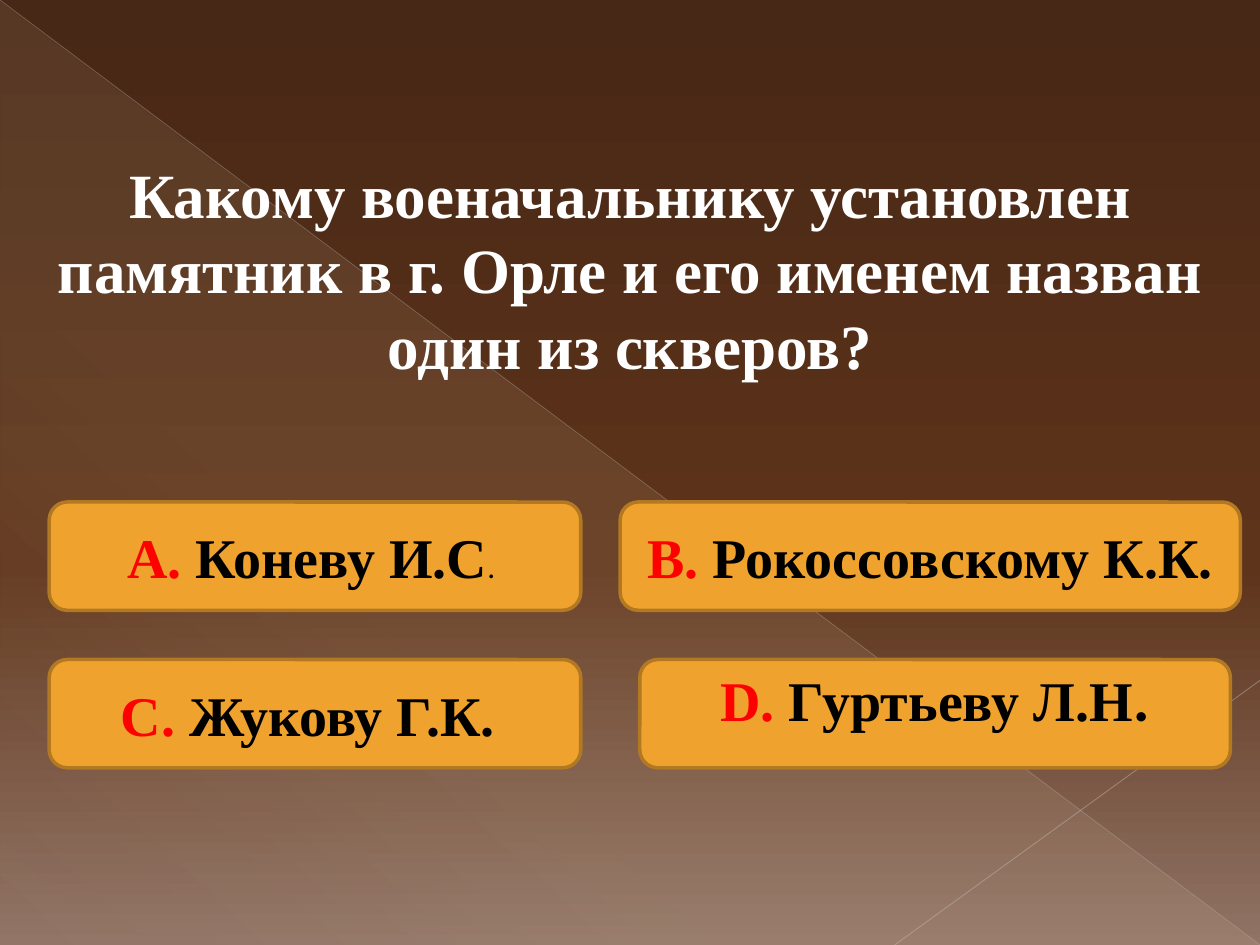
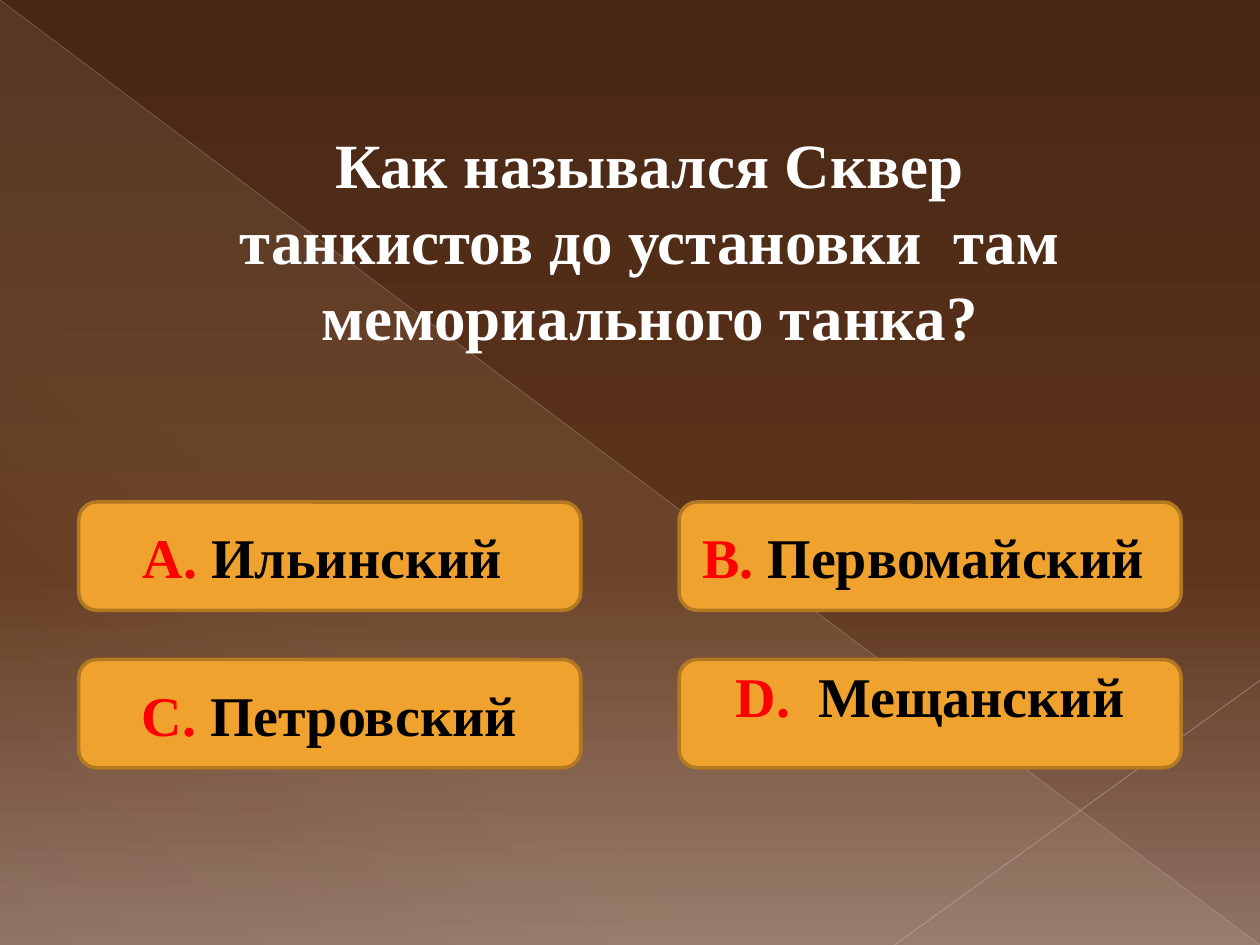
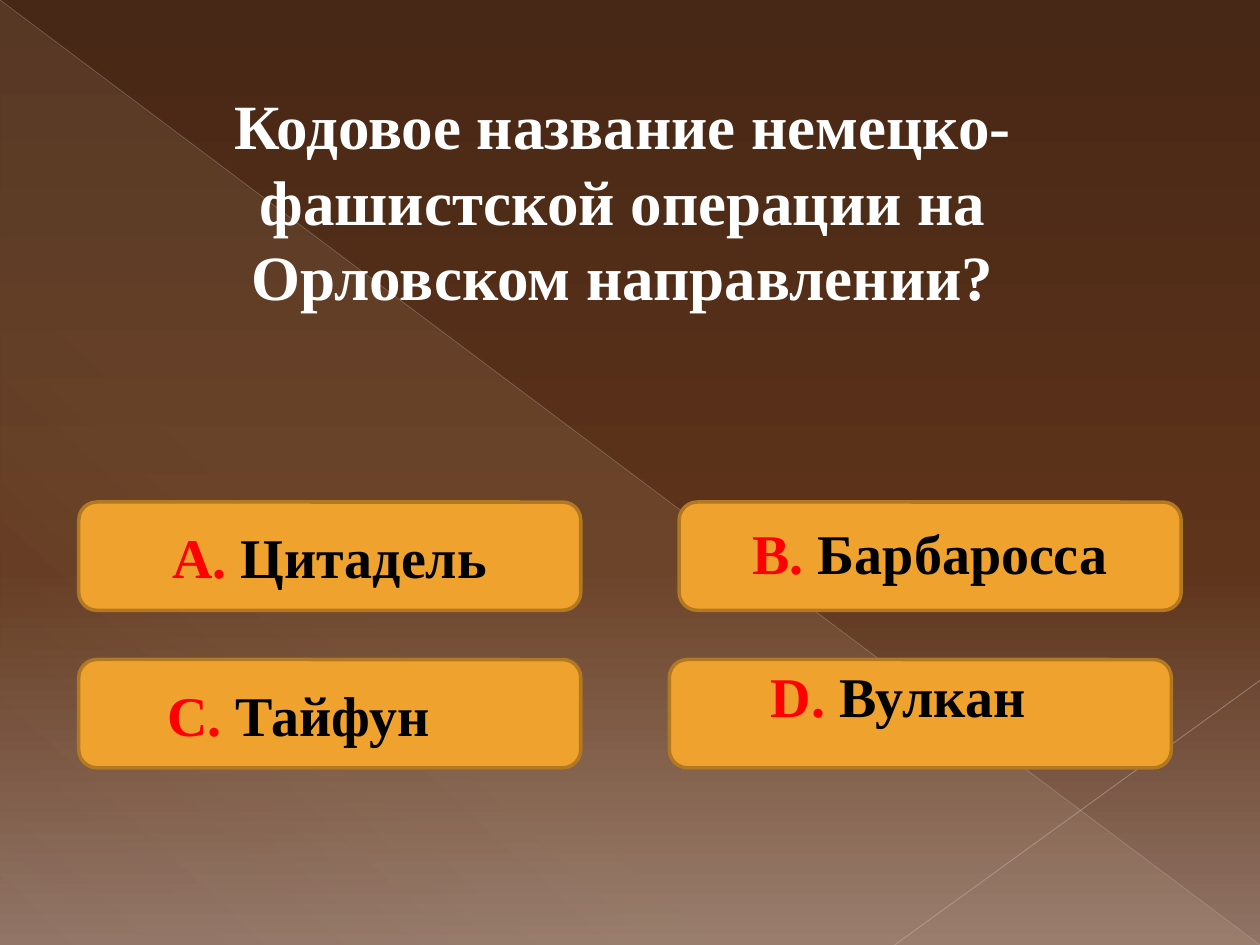
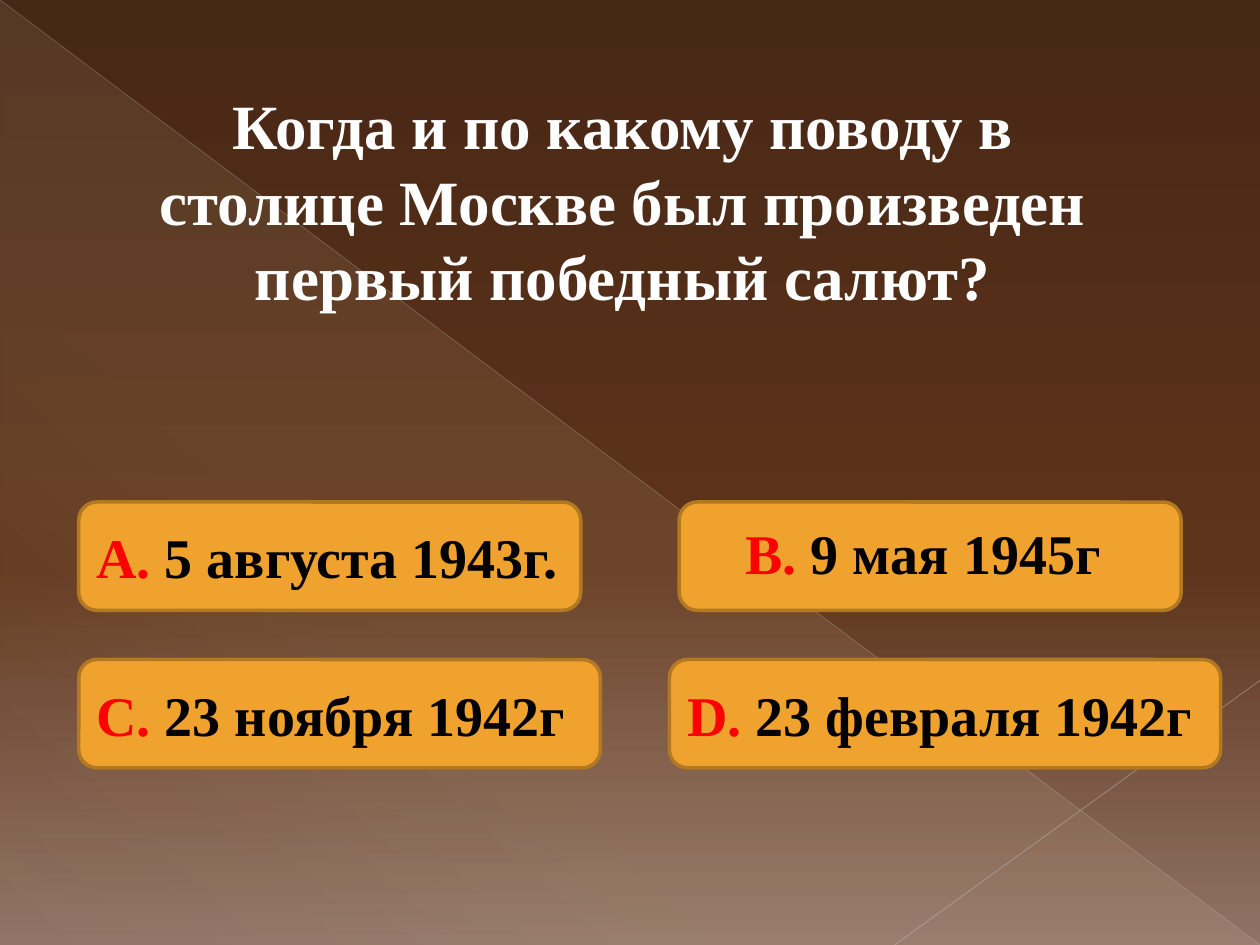
from dataclasses import dataclass
from typing import NamedTuple

from lxml.etree import SubElement
from pptx import Presentation
from pptx.dml.color import RGBColor
from pptx.enum.shapes import MSO_CONNECTOR, MSO_SHAPE
from pptx.enum.text import MSO_ANCHOR, MSO_AUTO_SIZE, PP_ALIGN
from pptx.oxml.ns import qn
from pptx.util import Emu, Inches, Pt

WIDTH, HEIGHT = Inches(10), Inches(7.5)
COLUMNS, ROWS = 128, 96
ANSWER_ROWS = (51, 67)
ANSWER_HEIGHT = 11
QUESTION_HEIGHT = 24.6


class Stop(NamedTuple):
    position: int
    color: str
    opacity: int = 100


class Ray(NamedTuple):
    start: tuple[float, float]
    end: tuple[float, float]
    color: str
    weight: float
    opacity: int


class Span(NamedTuple):
    column: float
    width: float


class Ending(NamedTuple):
    text: str
    size: int
    bold: bool


@dataclass(frozen=True)
class Theme:
    font: str = "Times New Roman"
    ending_font: str = "Calibri"
    question_size: int = 36
    answer_size: int = 32
    question: str = "FFFFFF"
    letter: str = "FF0000"
    answer: str = "000000"
    button: str = "F0A22E"
    button_edge: str = "B27822"
    edge_weight: float = 2
    backdrop: tuple[Stop, ...] = (
        Stop(0, "472715"), Stop(60, "5E341B"), Stop(100, "907365"))
    glow: tuple[Stop, ...] = (
        Stop(0, "FBEEC9", 10), Stop(70, "FBEEC9", 8), Stop(100, "FBEEC9", 1))
    rays: tuple[Ray, ...] = (
        Ray((0, 0), (1, 1), "BCB7B4", 0.39, 35),
        Ray((1, 0.72), (0.71, 1), "C4BFBD", 0.47, 45))


@dataclass(frozen=True)
class Answer:
    letter: str
    text: str
    span: Span
    ending: Ending | None = None
    align: PP_ALIGN = PP_ALIGN.CENTER
    left_pad: float = 0
    right_pad: float = 0
    bottom_pad: float = 0


@dataclass(frozen=True)
class Question:
    text: str
    span: Span
    row: float
    answers: tuple[Answer, Answer, Answer, Answer]


THEME = Theme()
LEFT, RIGHT, INNER_RIGHT = Span(8, 51), Span(69, 51), Span(68, 51)
WIDE_LEFT = Span(5, 54)
HEADING = Span(13, 100.5)

QUESTIONS = (
    Question(
        "Какому военачальнику установлен памятник в г. Орле и его именем назван один из скверов?",
        Span(0, 128), 15,
        (Answer("А. ", "Коневу И.С", WIDE_LEFT, Ending(". ", 18, False)),
         Answer("В. ", "Рокоссовскому К.К.", Span(63, 63)),
         Answer("С. ", "Жукову Г.К. ", WIDE_LEFT),
         Answer("D. ", "Гуртьеву Л.Н", Span(65, 60), Ending(".", 36, True),
                bottom_pad=0.27))),
    Question(
        "Как назывался Сквер танкистов до установки  там мемориального танка?",
        Span(20, 92), 12,
        (Answer("А. ", "Ильинский ", LEFT),
         Answer("В. ", "Первомайский", RIGHT, right_pad=0.11),
         Answer("С. ", "Петровский", LEFT),
         Answer("D.  ", "Мещанский", RIGHT, bottom_pad=0.29))),
    Question(
        "Кодовое название немецко-фашистской операции на Орловском направлении?",
        HEADING, 8,
        (Answer("А. ", "Цитадель", LEFT),
         Answer("В. ", "Барбаросса", RIGHT, bottom_pad=0.06),
         Answer("С. ", "Тайфун", LEFT, align=PP_ALIGN.LEFT, left_pad=0.56),
         Answer("D. ", "Вулкан", INNER_RIGHT, right_pad=0.35, bottom_pad=0.29))),
    Question(
        "Когда и по какому поводу в столице Москве был произведен первый победный салют?",
        HEADING, 8,
        (Answer("А. ", "5 августа 1943г.", LEFT, align=PP_ALIGN.LEFT),
         Answer("В. ", "9 мая 1945г ", RIGHT, bottom_pad=0.06),
         Answer("С. ", "23 ноября 1942г", Span(8, 53), align=PP_ALIGN.LEFT),
         Answer("D. ", "23 февраля 1942г", Span(68, 56), align=PP_ALIGN.LEFT))),
)


def across(columns: float) -> Emu:
    return Emu(round(WIDTH * columns / COLUMNS))


def down(rows: float) -> Emu:
    return Emu(round(HEIGHT * rows / ROWS))


def style_run(run, color: str, size: float, font: str = THEME.font, bold: bool = True) -> None:
    run.font.name = font
    run.font.size = Pt(size)
    run.font.bold = bold
    run.font.color.rgb = RGBColor.from_string(color)


def add_opacity(color_element, opacity: int) -> None:
    if opacity < 100:
        SubElement(color_element, qn("a:alpha"), val=str(opacity * 1000))


def fill_gradient(fill, element, stops: tuple[Stop, ...], angle: int) -> None:
    fill.gradient()
    gradient = element.find(".//" + qn("a:gradFill"))
    stop_list = gradient.find(qn("a:gsLst"))
    stop_list.clear()
    for stop in stops:
        mark = SubElement(stop_list, qn("a:gs"), pos=str(stop.position * 1000))
        add_opacity(SubElement(mark, qn("a:srgbClr"), val=stop.color), stop.opacity)
    direction = gradient.find(qn("a:lin"))
    direction.set("ang", str(angle * 60000))
    direction.set("scaled", "0")


def draw_ray(slide, ray: Ray):
    (x1, y1), (x2, y2) = ray.start, ray.end
    line = slide.shapes.add_connector(
        MSO_CONNECTOR.STRAIGHT,
        round(WIDTH * x1), round(HEIGHT * y1), round(WIDTH * x2), round(HEIGHT * y2))
    line.line.width = Pt(ray.weight)
    line.line.color.rgb = RGBColor.from_string(ray.color)
    add_opacity(line.element.find(".//" + qn("a:srgbClr")), ray.opacity)
    SubElement(line.element.spPr, qn("a:effectLst"))
    return line


def decorate_master(master, slide) -> None:
    fill_gradient(master.background.fill, master.element, THEME.backdrop, 90)
    glow = slide.shapes.add_shape(MSO_SHAPE.RIGHT_TRIANGLE, 0, 0, WIDTH, HEIGHT)
    fill_gradient(glow.fill, glow.element, THEME.glow, 133)
    glow.line.fill.background()
    glow.shadow.inherit = False
    decor = [glow, *(draw_ray(slide, ray) for ray in THEME.rays)]
    for number, piece in enumerate(decor, start=100):
        piece.element.find(".//" + qn("p:cNvPr")).set("id", str(number))
        master.shapes.element.append(piece.element)


def place_question(slide, question: Question) -> None:
    title = slide.shapes.title
    title.left, title.top = across(question.span.column), down(question.row)
    title.width, title.height = across(question.span.width), down(QUESTION_HEIGHT)
    frame = title.text_frame
    frame.text = question.text
    frame.word_wrap = True
    frame.auto_size = MSO_AUTO_SIZE.SHAPE_TO_FIT_TEXT
    frame.vertical_anchor = MSO_ANCHOR.MIDDLE
    paragraph = frame.paragraphs[0]
    paragraph.alignment = PP_ALIGN.CENTER
    style_run(paragraph.runs[0], THEME.question, THEME.question_size)


def draw_answer(slide, answer: Answer, row: float) -> None:
    button = slide.shapes.add_shape(
        MSO_SHAPE.FLOWCHART_ALTERNATE_PROCESS,
        across(answer.span.column), down(row),
        across(answer.span.width), down(ANSWER_HEIGHT))
    button.shadow.inherit = False
    button.fill.solid()
    button.fill.fore_color.rgb = RGBColor.from_string(THEME.button)
    button.line.color.rgb = RGBColor.from_string(THEME.button_edge)
    button.line.width = Pt(THEME.edge_weight)

    frame = button.text_frame
    frame.word_wrap = True
    frame.vertical_anchor = MSO_ANCHOR.MIDDLE
    frame.margin_left = Inches(0.1 + answer.left_pad)
    frame.margin_right = Inches(0.1 + answer.right_pad)
    frame.margin_bottom = Inches(0.05 + answer.bottom_pad)
    paragraph = frame.paragraphs[0]
    paragraph.alignment = answer.align
    for text, color in ((answer.letter, THEME.letter), (answer.text, THEME.answer)):
        run = paragraph.add_run()
        run.text = text
        style_run(run, color, THEME.answer_size)
    if answer.ending:
        run = paragraph.add_run()
        run.text = answer.ending.text
        style_run(run, THEME.answer, answer.ending.size,
                  THEME.ending_font, answer.ending.bold)


def main() -> None:
    quiz = Presentation()
    quiz.slide_width, quiz.slide_height = WIDTH, HEIGHT
    title_only = quiz.slide_layouts[5]
    for number, question in enumerate(QUESTIONS):
        slide = quiz.slides.add_slide(title_only)
        if number == 0:
            decorate_master(quiz.slide_master, slide)
        place_question(slide, question)
        for position, answer in enumerate(question.answers):
            draw_answer(slide, answer, ANSWER_ROWS[position // 2])
    quiz.save("out.pptx")


if __name__ == "__main__":
    main()
